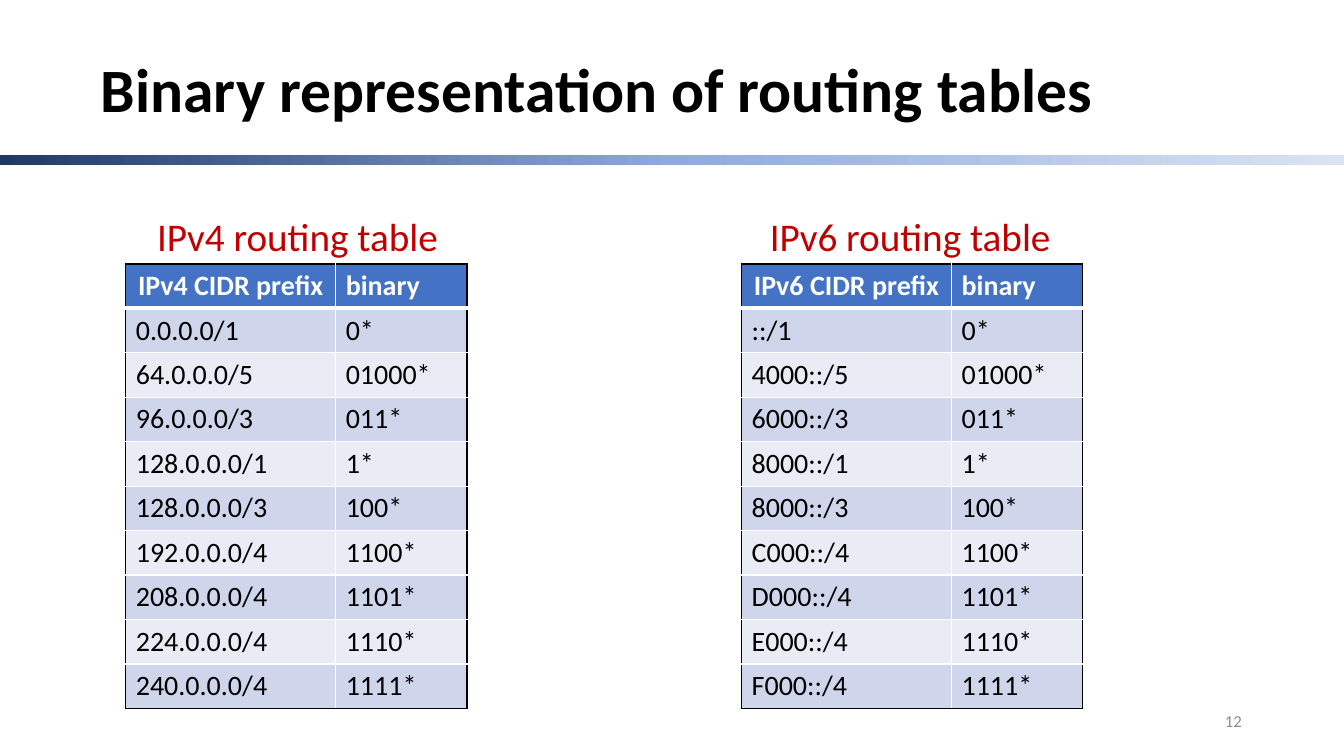
from copy import deepcopy

from lxml.etree import SubElement
from pptx import Presentation
from pptx.dml.color import RGBColor
from pptx.enum.shapes import MSO_SHAPE
from pptx.enum.text import MSO_ANCHOR, PP_ALIGN
from pptx.oxml.ns import qn
from pptx.util import Cm, Pt

FONT = "Calibri"
BLACK = RGBColor(0x00, 0x00, 0x00)
WHITE = RGBColor(0xFF, 0xFF, 0xFF)
RED = RGBColor(0xC0, 0x00, 0x00)
GRAY = RGBColor(0x8C, 0x8C, 0x8C)
HEADER_BLUE = RGBColor(0x44, 0x72, 0xC4)
BANDS = (RGBColor(0xCF, 0xD5, 0xEA), RGBColor(0xE9, 0xEB, 0xF5))
RULE_COLORS = (
    RGBColor(0x20, 0x38, 0x64),
    RGBColor(0x8F, 0xAA, 0xDC),
    RGBColor(0xDA, 0xE3, 0xF3),
)

SLIDE_WIDTH = Cm(33.87)
TABLE_TOP = Cm(6.65)
ROW_HEIGHT = Cm(1.12)
COLUMN_WIDTHS = (Cm(5.29), Cm(3.31))

BINARY = ("0*", "01000*", "011*", "1*", "100*", "1100*", "1101*", "1110*", "1111*")
IPV4_PREFIXES = (
    "0.0.0.0/1", "64.0.0.0/5", "96.0.0.0/3", "128.0.0.0/1", "128.0.0.0/3",
    "192.0.0.0/4", "208.0.0.0/4", "224.0.0.0/4", "240.0.0.0/4",
)
IPV6_PREFIXES = (
    "::/1", "4000::/5", "6000::/3", "8000::/1", "8000::/3",
    "C000::/4", "D000::/4", "E000::/4", "F000::/4",
)


def format_paragraph(paragraph, size, color, bold=False, alignment=PP_ALIGN.LEFT):
    paragraph.alignment = alignment
    font = paragraph.font
    font.name, font.size, font.bold = FONT, Pt(size), bold
    font.color.rgb = color


def place(shape, left, top, width, height):
    shape.left, shape.top, shape.width, shape.height = left, top, width, height


def format_title(slide, text):
    title = slide.shapes.title
    place(title, Cm(2.29), Cm(1.07), Cm(33.3), Cm(2.54))
    frame = title.text_frame
    frame.text = text
    frame.word_wrap = True
    frame.vertical_anchor = MSO_ANCHOR.MIDDLE
    paragraph = frame.paragraphs[0]
    paragraph.line_spacing = 0.9
    format_paragraph(paragraph, 44, BLACK, bold=True)


def add_gradient_rule(slide):
    rule = slide.shapes.add_shape(MSO_SHAPE.RECTANGLE, 0, Cm(3.91), SLIDE_WIDTH, Cm(0.24))
    rule.shadow.inherit = False
    rule.line.fill.background()
    rule.fill.gradient()
    rule.fill.gradient_angle = 0
    # The default gradient has two stops; a third goes in the middle
    stop_list = rule.fill._xPr.find(qn("a:gradFill")).find(qn("a:gsLst"))
    stop_list.insert(1, deepcopy(stop_list[0]))
    for index, (stop, color) in enumerate(zip(rule.fill.gradient_stops, RULE_COLORS)):
        stop.position = index / 2
        stop.color.rgb = color


def add_label(slide, text, left, top, width, height, size, color, alignment, wrap=True):
    box = slide.shapes.add_textbox(left, top, width, height)
    frame = box.text_frame
    frame.word_wrap = wrap
    frame.vertical_anchor = MSO_ANCHOR.MIDDLE
    frame.text = text
    format_paragraph(frame.paragraphs[0], size, color, alignment=alignment)


def set_borders(cell, borders):
    properties = cell._tc.get_or_add_tcPr()
    for side in ("L", "R", "T", "B"):
        color, width = borders[side]
        line = SubElement(properties, qn(f"a:ln{side}"), w=str(Pt(width)))
        fill = SubElement(line, qn("a:solidFill"))
        SubElement(fill, qn("a:srgbClr"), val=str(color))


def add_routing_table(slide, left, rows):
    last_row, last_column = len(rows) - 1, len(COLUMN_WIDTHS) - 1
    table = slide.shapes.add_table(
        len(rows), len(COLUMN_WIDTHS), left, TABLE_TOP,
        sum(COLUMN_WIDTHS), ROW_HEIGHT * len(rows),
    ).table
    for column, width in zip(table.columns, COLUMN_WIDTHS):
        column.width = width
    for row_index, values in enumerate(rows):
        table.rows[row_index].height = ROW_HEIGHT
        header = row_index == 0
        for column_index, value in enumerate(values):
            cell = table.cell(row_index, column_index)
            cell.text = value
            centered = header and column_index == 0
            format_paragraph(
                cell.text_frame.paragraphs[0], 20, WHITE if header else BLACK, bold=header,
                alignment=PP_ALIGN.CENTER if centered else PP_ALIGN.LEFT,
            )
            # Black outside, white inside, thick below the header
            set_borders(cell, {
                "L": (BLACK if column_index == 0 else WHITE, 1),
                "R": (BLACK if column_index == last_column else WHITE, 1),
                "T": (BLACK if header else WHITE, 3 if row_index == 1 else 1),
                "B": (BLACK if row_index == last_row else WHITE, 3 if header else 1),
            })
            cell.fill.solid()
            cell.fill.fore_color.rgb = HEADER_BLUE if header else BANDS[(row_index - 1) % 2]


def main():
    presentation = Presentation()
    presentation.slide_width, presentation.slide_height = SLIDE_WIDTH, Cm(19.05)
    slide = presentation.slides.add_slide(presentation.slide_layouts[5])

    # Heading
    add_gradient_rule(slide)
    format_title(slide, "Binary representation of routing tables")

    # Routing tables with their captions
    for protocol, prefixes, table_left, caption_left in (
        ("IPv4", IPV4_PREFIXES, Cm(3.17), Cm(3.71)),
        ("IPv6", IPV6_PREFIXES, Cm(18.69), Cm(19.15)),
    ):
        rows = [(f"{protocol} CIDR prefix", "binary"), *zip(prefixes, BINARY)]
        add_routing_table(slide, table_left, rows)
        add_label(slide, f"{protocol} routing table", caption_left, Cm(5.21), Cm(7.67),
                  Cm(1.45), 28, RED, PP_ALIGN.LEFT, wrap=False)

    # Slide number
    add_label(slide, "12", Cm(23.93), Cm(17.65), Cm(7.62), Cm(1.02), 12, GRAY, PP_ALIGN.RIGHT)

    presentation.save("out.pptx")


if __name__ == "__main__":
    main()
